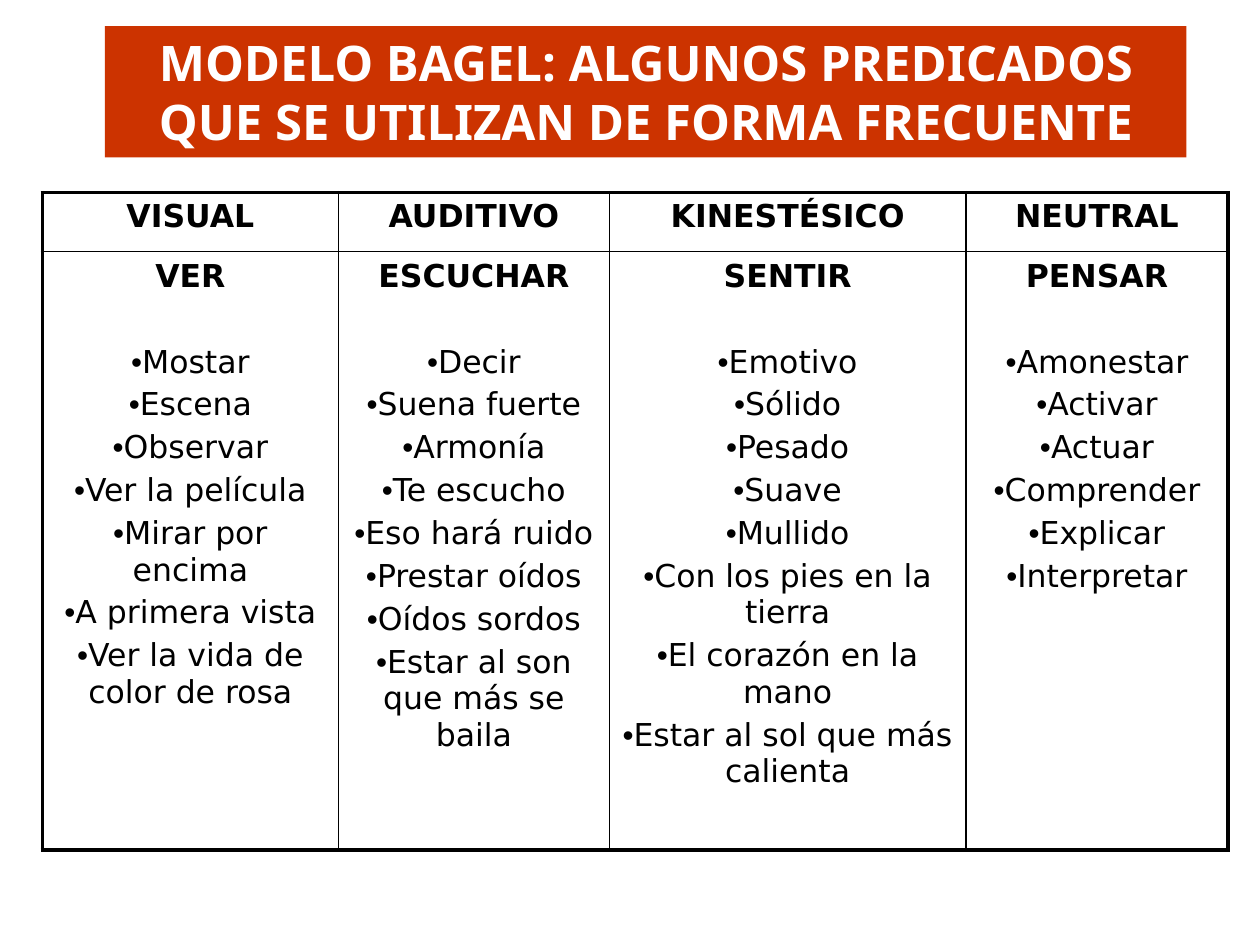
from dataclasses import dataclass

from lxml import etree
from pptx import Presentation
from pptx.dml.color import RGBColor
from pptx.enum import shapes, text
from pptx.oxml import ns
from pptx.util import Pt


@dataclass(frozen=True)
class Theme:
    """Colours, fonts and sizes of the slide."""
    ink: str = "000000"
    paper: str = "FFFFFF"
    band: str = "CC3300"
    head: str = "Noto Sans"
    body: str = "DejaVu Sans"
    dot: str = "Arial"
    big: float = 28
    small: float = 18
    thick: float = 2.25
    thin: float = 1


THEME = Theme()
TITLE = "MODELO BAGEL: ALGUNOS PREDICADOS QUE SE UTILIZAN DE FORMA FRECUENTE"
WIDTHS = (169.2, 154.8, 203.76, 149.76)
HEIGHTS = (33.84, 342)
SENSES = (
    ("VISUAL", "VER", ("Mostar", "Escena", "Observar", "Ver la película",
                       "Mirar por encima", "A primera vista",
                       "Ver la vida de color de rosa")),
    ("AUDITIVO", "ESCUCHAR", ("Decir", "Suena fuerte", "Armonía", "Te escucho",
                              "Eso hará ruido", "Prestar oídos", "Oídos sordos",
                              "Estar al son que más se baila")),
    ("KINESTÉSICO", "SENTIR", ("Emotivo", "Sólido", "Pesado", "Suave", "Mullido",
                               "Con los pies en la tierra",
                               "El corazón en la mano",
                               "Estar al sol que más calienta")),
    ("NEUTRAL", "PENSAR", ("Amonestar", "Activar", "Actuar", "Comprender",
                           "Explicar", "Interpretar")),
)


def style(para, words, font, size, color, bold):
    """Fill a centred paragraph with words in one font."""
    para.text = words
    para.alignment = text.PP_ALIGN.CENTER
    para.font.name = font
    para.font.size = Pt(size)
    para.font.bold = bold
    para.font.color.rgb = RGBColor.from_string(color)


def add_title(slide):
    """Add the red title band."""
    band = slide.shapes.add_shape(shapes.MSO_SHAPE.RECTANGLE, Pt(60), Pt(15),
                                  Pt(618), Pt(75))
    band.shadow.inherit = False
    band.fill.solid()
    band.fill.fore_color.rgb = RGBColor.from_string(THEME.band)
    band.line.fill.background()
    frame = band.text_frame
    frame.word_wrap = True
    frame.vertical_anchor = text.MSO_ANCHOR.TOP
    para = frame.paragraphs[0]
    style(para, TITLE, THEME.head, THEME.big, THEME.paper, True)
    para.line_spacing = Pt(33.7)


def add_edge(cell, side, width):
    """Draw one solid border of a cell."""
    line = etree.SubElement(cell._tc.get_or_add_tcPr(), ns.qn(f"a:ln{side}"),
                            w=str(Pt(width)))
    fill = etree.SubElement(line, ns.qn("a:solidFill"))
    etree.SubElement(fill, ns.qn("a:srgbClr"), val=THEME.ink)


def add_bullet(para):
    """Put a round bullet directly before a paragraph."""
    props = para._p.get_or_add_pPr()
    props.set("marL", "0")
    props.set("indent", "0")
    rest = props.find(ns.qn("a:defRPr"))
    rest.addprevious(etree.Element(ns.qn("a:buFont"), typeface=THEME.dot))
    rest.addprevious(etree.Element(ns.qn("a:buChar"), char="•"))


def fill_cell(cell, head, items=()):
    """Write a bold heading and its bulleted items."""
    frame = cell.text_frame
    para = frame.paragraphs[0]
    style(para, head, THEME.body, THEME.small, THEME.ink, True)
    para.space_before = Pt(3.6)
    for rank, item in enumerate(items):
        para = frame.add_paragraph()
        style(para, item, THEME.body, THEME.small, THEME.ink, False)
        para.space_before = Pt(3.6 if rank else 28.2)
        add_bullet(para)


def add_grid(slide):
    """Add the table of predicates by sense."""
    rows, cols = len(HEIGHTS), len(WIDTHS)
    grid = slide.shapes.add_table(rows, cols, Pt(24.2), Pt(110),
                                  Pt(sum(WIDTHS)), Pt(sum(HEIGHTS))).table
    grid.first_row = grid.horz_banding = False
    for row, height in zip(grid.rows, HEIGHTS):
        row.height = Pt(height)
    for col, (width, (name, verb, items)) in enumerate(zip(WIDTHS, SENSES)):
        grid.columns[col].width = Pt(width)
        fill_cell(grid.cell(0, col), name)
        fill_cell(grid.cell(1, col), verb, items)
        for row in range(rows):
            cell = grid.cell(row, col)
            outer = {"L": col == 0, "R": col == cols - 1,
                     "T": row == 0, "B": row == rows - 1}
            for side, edge in outer.items():
                add_edge(cell, side, THEME.thick if edge else THEME.thin)
            cell.fill.background()


def main():
    """Build and save the slide."""
    deck = Presentation()
    deck.slide_width, deck.slide_height = Pt(720), Pt(540)
    slide = deck.slides.add_slide(deck.slide_layouts[6])
    add_grid(slide)
    add_title(slide)
    deck.save("out.pptx")


if __name__ == "__main__":
    main()
